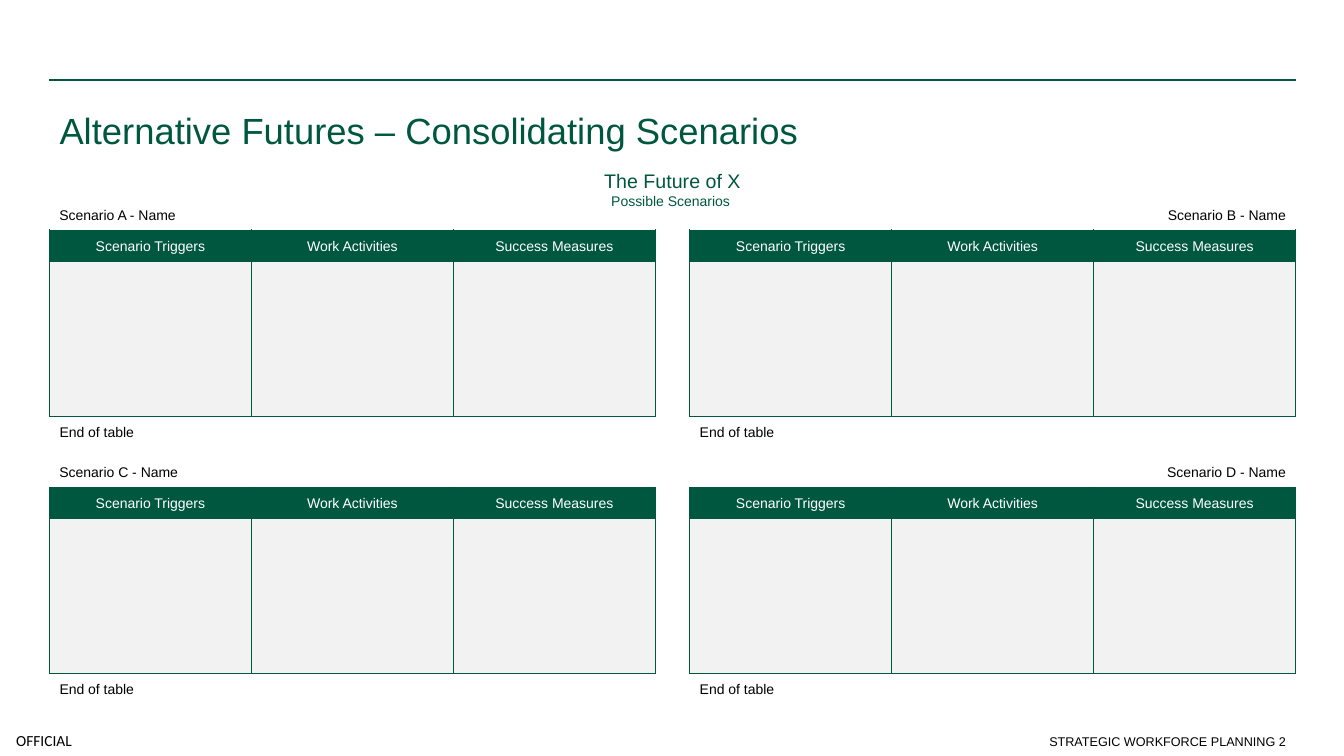
from lxml.etree import SubElement
from pptx import Presentation
from pptx.dml.color import RGBColor
from pptx.enum.shapes import MSO_CONNECTOR
from pptx.enum.text import MSO_ANCHOR, PP_ALIGN
from pptx.oxml import parse_xml
from pptx.oxml.ns import nsdecls, qn
from pptx.util import Inches, Pt

# Content
TITLE = "Alternative Futures – Consolidating Scenarios"
HEADING = ["The Future of X", "Possible Scenarios "]
SCENARIOS = [["Scenario A - Name", "Scenario B - Name"],
             ["Scenario C - Name", "Scenario D - Name"]]
TABLE_ROWS = [["Scenario Triggers", "Work Activities", "Success Measures"],
              ["", "", ""],
              ["End of table", "", ""]]
MARKING = "OFFICIAL"
FOOTER = "STRATEGIC WORKFORCE PLANNING 2"

# Style and grid
GREEN, GREY, WHITE, BLACK = "00573F", "F2F2F2", "FFFFFF", "000000"
ROW_FILLS = [GREEN, GREY, WHITE]
ROW_HEIGHTS = [0.31, 1.54, 0.31]
LEFT, WIDTH = 0.49, 12.36
TABLE_W = 6.01
COLUMN_X = [LEFT, LEFT + WIDTH - TABLE_W]
TABLE_Y = [2.28, 4.83]
LABEL_H = 0.31


def rgb(value):
    return RGBColor.from_string(value)


def add_run(p, text, size, color, font="Arial"):
    r = p.add_run()
    r.text = text
    r.font.size, r.font.name = Pt(size), font
    r.font.color.rgb = rgb(color)


def add_box(s, x, y, w, h, anchor=MSO_ANCHOR.TOP, align=PP_ALIGN.LEFT):
    tf = s.shapes.add_textbox(Inches(x), Inches(y), Inches(w), Inches(h)).text_frame
    tf.word_wrap = True
    tf.vertical_anchor = anchor
    tf.paragraphs[0].alignment = align
    return tf


def set_borders(cell, sides):
    tc_pr = cell._tc.get_or_add_tcPr()
    for i, side in enumerate("LRTB"):
        paint = (f'<a:solidFill><a:srgbClr val="{GREEN}"/></a:solidFill>'
                 if side in sides else "<a:noFill/>")
        tc_pr.insert(i, parse_xml(
            f'<a:ln{side} {nsdecls("a")} w="{Pt(0.5)}">{paint}</a:ln{side}>'))


def add_scenario_table(s, x, y):
    n_rows, n_cols = len(TABLE_ROWS), len(TABLE_ROWS[0])
    table = s.shapes.add_table(n_rows, n_cols, Inches(x), Inches(y),
                               Inches(TABLE_W), Inches(sum(ROW_HEIGHTS))).table
    table.first_row = table.horz_banding = False
    for row, height in zip(table.rows, ROW_HEIGHTS):
        row.height = Inches(height)
    for i, texts in enumerate(TABLE_ROWS):
        header, last = i == 0, i == n_rows - 1
        for j, text in enumerate(texts):
            cell = table.cell(i, j)
            set_borders(cell, "T" if last else "LRTB")
            cell.fill.solid()
            cell.fill.fore_color.rgb = rgb(ROW_FILLS[i])
            cell.vertical_anchor = MSO_ANCHOR.MIDDLE if header else MSO_ANCHOR.TOP
            p = cell.text_frame.paragraphs[0]
            p.line_spacing = 1.2
            p.alignment = PP_ALIGN.CENTER if header else PP_ALIGN.LEFT
            if text:
                add_run(p, text, 10, WHITE if header else BLACK)
            else:  # keeps empty rows from growing
                SubElement(p._p, qn("a:endParaRPr"), sz="1000")


prs = Presentation()
prs.slide_width, prs.slide_height = Inches(13.33), Inches(7.5)
s = prs.slides.add_slide(prs.slide_layouts[5])

# Top rule
rule = s.shapes.add_connector(MSO_CONNECTOR.STRAIGHT, Inches(LEFT), Inches(0.79),
                              Inches(LEFT + WIDTH), Inches(0.79))
rule.line.color.rgb = rgb(GREEN)
rule.line.width = Pt(1.5)
SubElement(rule._element.spPr, qn("a:effectLst"))

# Title
title = s.shapes.title
title.left, title.top = Inches(LEFT), Inches(0.89)
title.width, title.height = Inches(WIDTH), Inches(1.02)
tf = title.text_frame
tf.vertical_anchor = MSO_ANCHOR.TOP
tf.margin_top = Inches(0.1)
p = tf.paragraphs[0]
p.alignment, p.line_spacing = PP_ALIGN.LEFT, 1.2
add_run(p, TITLE, 26, GREEN)

# Centred heading
p = add_box(s, LEFT, 1.48, WIDTH, 0.79, MSO_ANCHOR.MIDDLE, PP_ALIGN.CENTER).paragraphs[0]
add_run(p, HEADING[0], 14, GREEN)
p.add_line_break()
add_run(p, HEADING[1], 10, GREEN)

# Scenario labels and tables
for names, y in zip(SCENARIOS, TABLE_Y):
    for name, x, align in zip(names, COLUMN_X, [PP_ALIGN.LEFT, PP_ALIGN.RIGHT]):
        p = add_box(s, x, y - LABEL_H, TABLE_W, LABEL_H, align=align).paragraphs[0]
        p.line_spacing = 1.2
        add_run(p, name, 10, BLACK)
        add_scenario_table(s, x, y)

# Marking and footer
tf = add_box(s, 0, 7.19, 0.87, 0.31, MSO_ANCHOR.MIDDLE)
tf.margin_left = Inches(0.16)
tf.margin_right = tf.margin_top = tf.margin_bottom = 0
add_run(tf.paragraphs[0], MARKING, 11, BLACK, "Calibri")
tf = add_box(s, COLUMN_X[1], 7.09, TABLE_W, 0.39, MSO_ANCHOR.BOTTOM, PP_ALIGN.RIGHT)
add_run(tf.paragraphs[0], FOOTER, 9, BLACK)

prs.save("out.pptx")
